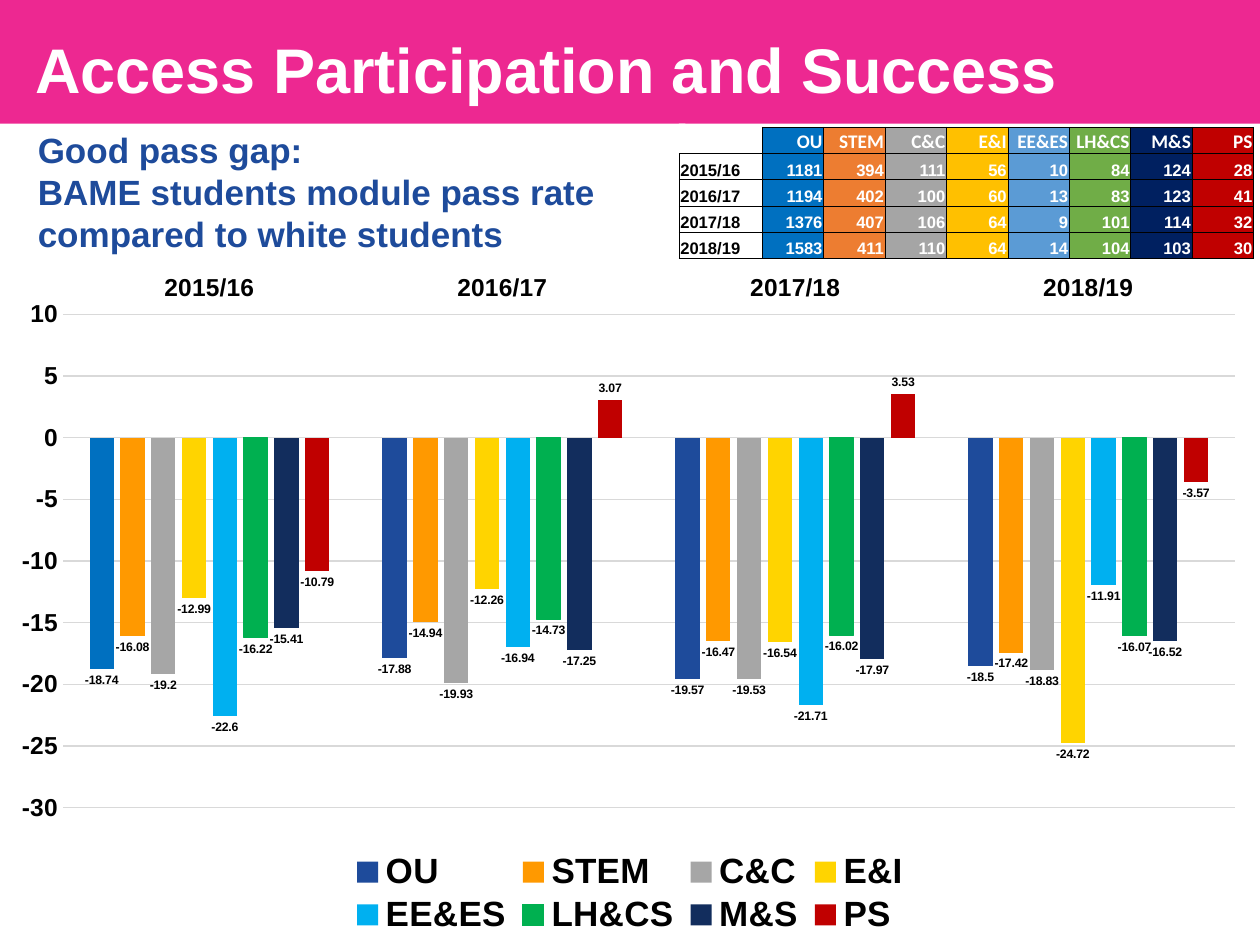
from lxml import etree
from pptx import Presentation, util as u
from pptx.chart.data import CategoryChartData
from pptx.dml.color import RGBColor
from pptx.enum import chart as charts, shapes, text
from pptx.oxml.ns import qn

YEARS = ["2015/16", "2016/17", "2017/18", "2018/19"]
STUDENT_COUNTS = {
    "OU": ("0070C0", [1181, 1194, 1376, 1583]),
    "STEM": ("ED7D31", [394, 402, 407, 411]),
    "C&C": ("A5A5A5", [111, 100, 106, 110]),
    "E&I": ("FFC000", [56, 60, 64, 64]),
    "EE&ES": ("5B9BD5", [10, 13, 9, 14]),
    "LH&CS": ("70AD47", [84, 83, 101, 104]),
    "M&S": ("002060", [124, 123, 114, 103]),
    "PS": ("C00000", [28, 41, 32, 30]),
}
PASS_GAPS = {
    "OU": ("1E4B9B", [-18.74, -17.88, -19.57, -18.5]),
    "STEM": ("FF9900", [-16.08, -14.94, -16.47, -17.42]),
    "C&C": ("A6A6A6", [-19.2, -19.93, -19.53, -18.83]),
    "E&I": ("FFD400", [-12.99, -12.26, -16.54, -24.72]),
    "EE&ES": ("00B0F0", [-22.6, -16.94, -21.71, -11.91]),
    "LH&CS": ("00B050", [-16.22, -14.73, -16.02, -16.07]),
    "M&S": ("122D5D", [-15.41, -17.25, -17.97, -16.52]),
    "PS": ("C00000", [-10.79, 3.07, 3.53, -3.57]),
}


def color(value):
    return RGBColor.from_string(value)


def apply(target, **values):
    for name, value in values.items():
        setattr(target, name, value)


def paint(fill, value):
    fill.solid()
    fill.fore_color.rgb = color(value)


class Deck:
    font = "Arial"
    ink = "000000"
    paper = "FFFFFF"
    grid = "D9D9D9"

    def __init__(self, width, height):
        self.deck = Presentation()
        apply(self.deck, slide_width=u.Pt(width), slide_height=u.Pt(height))
        self.slide = self.deck.slides.add_slide(self.deck.slide_layouts[6])

    def background(self, value):
        paint(self.slide.background.fill, value)

    def style(self, font, size, value=None, face=None):
        apply(font, size=u.Pt(size), bold=True, name=face or self.font)
        font.color.rgb = color(value or self.ink)

    def fill_text(self, frame, lines, size, value, inset=0, **format_values):
        apply(frame, word_wrap=True, margin_left=u.Pt(inset), margin_top=0,
              margin_right=0, margin_bottom=0)
        for index, line in enumerate(lines):
            paragraph = frame.paragraphs[0] if index == 0 else frame.add_paragraph()
            apply(paragraph, alignment=text.PP_ALIGN.LEFT, **format_values)
            run = paragraph.add_run()
            run.text = line
            self.style(run.font, size, value)

    def panel(self, *box):
        panel = self.slide.shapes.add_shape(shapes.MSO_SHAPE.RECTANGLE, *map(u.Pt, box))
        panel.shadow.inherit = False
        paint(panel.fill, self.paper)
        panel.line.fill.background()
        return panel

    def title(self, line, *box):
        title = self.slide.shapes.add_textbox(*map(u.Pt, box))
        self.fill_text(title.text_frame, [line], 36, self.paper, line_spacing=0.9)

    def statement(self, lines, *box):
        frame = self.panel(*box).text_frame
        self.fill_text(frame, lines, 20, "1E4B9B", inset=21.6)
        frame.vertical_anchor = text.MSO_ANCHOR.MIDDLE

    def borders(self, cell, sides):
        properties = cell._tc.get_or_add_tcPr()
        for side in "LRTB":
            line = etree.SubElement(properties, qn(f"a:ln{side}"), w=str(u.Pt(0.5)))
            if side in sides:
                fill = etree.SubElement(line, qn("a:solidFill"))
                etree.SubElement(fill, qn("a:srgbClr"), val=self.ink)
            else:
                etree.SubElement(line, qn("a:noFill"))

    def cell(self, cell, content, fill, size, value, face, align):
        apply(cell, margin_left=u.Pt(0.7), margin_right=u.Pt(0.7), margin_top=u.Pt(0.7),
              margin_bottom=0, vertical_anchor=text.MSO_ANCHOR.BOTTOM)
        self.borders(cell, "LRTB" if content else "RB")
        paint(cell.fill, fill)
        paragraph = cell.text_frame.paragraphs[0]
        paragraph.alignment = align
        if content:
            run = paragraph.add_run()
            run.text = content
            self.style(run.font, size, value, face)
        else:
            etree.SubElement(paragraph._p, qn("a:endParaRPr"), sz=str(size * 100))

    def counts_table(self, years, counts, left, top, width, height):
        table = self.slide.shapes.add_table(
            len(years) + 1, len(counts) + 1, *map(u.Pt, (left, top, width, height))).table
        apply(table, first_row=False, horz_banding=False)
        year_width = 47.5
        for index, column in enumerate(table.columns):
            column.width = u.Pt((width - year_width) / len(counts) if index else year_width)
        for row in table.rows:
            row.height = u.Pt(height / len(table.rows))
        align = text.PP_ALIGN
        for row, year in enumerate(["", *years]):
            self.cell(table.cell(row, 0), year, self.paper, 9.5 if row else 11,
                      self.ink, self.font, align.LEFT)
        for column, (faculty, (fill, values)) in enumerate(counts.items(), 1):
            for row, content in enumerate([faculty, *values]):
                size, face = (9.5, self.font) if row else (11, "Calibri")
                self.cell(table.cell(row, column), str(content), fill, size,
                          self.paper, face, align.RIGHT)

    def place(self, part, x, y, w, h, inner=False):
        for old in part.findall(qn("c:layout")):
            part.remove(old)
        layout = etree.Element(qn("c:layout"))
        manual = etree.SubElement(layout, qn("c:manualLayout"))
        settings = {"layoutTarget": "inner"} if inner else {}
        settings.update(xMode="edge", yMode="edge", x=x, y=y, w=w, h=h)
        for name, value in settings.items():
            etree.SubElement(manual, qn(f"c:{name}"), val=str(value))
        if inner:
            part.insert(0, layout)
        else:
            part.find(qn("c:legendPos")).addnext(layout)

    def gap_chart(self, years, gaps, *box):
        data = CategoryChartData()
        data.categories = years
        for faculty, (_, values) in gaps.items():
            data.add_series(faculty, values)
        chart = self.slide.shapes.add_chart(
            charts.XL_CHART_TYPE.COLUMN_CLUSTERED, *map(u.Pt, box), data).chart
        apply(chart, has_title=False, has_legend=True)
        self.style(chart.font, 10)
        apply(chart.legend, position=charts.XL_LEGEND_POSITION.BOTTOM, include_in_layout=False)
        self.style(chart.legend.font, 20)
        self.place(chart.legend._element, 0.27, 0.86, 0.46, 0.13)

        plot = chart.plots[0]
        apply(plot, gap_width=219, overlap=-27, vary_by_categories=False)
        for series, (fill, _) in zip(plot.series, gaps.values()):
            series.invert_if_negative = False
            paint(series.format.fill, fill)
            apply(series.data_labels, show_value=True,
                  position=charts.XL_LABEL_POSITION.OUTSIDE_END)
            self.style(series.data_labels.font, 7)
        paint(plot.series[0].points[0].format.fill, "0070C0")
        faculty_outline = plot.series[5].format.line
        faculty_outline.width = u.Pt(0.75)
        faculty_outline.color.rgb = color(gaps["LH&CS"][0])

        year_axis, gap_axis = chart.category_axis, chart.value_axis
        for axis in (year_axis, gap_axis):
            apply(axis, major_tick_mark=charts.XL_TICK_MARK.NONE,
                  minor_tick_mark=charts.XL_TICK_MARK.NONE)
            self.style(axis.tick_labels.font, 14)
        year_axis.tick_label_position = charts.XL_TICK_LABEL_POSITION.HIGH
        apply(gap_axis, minimum_scale=-30, maximum_scale=10, major_unit=5,
              has_major_gridlines=True)
        gap_axis.format.line.fill.background()
        for line in (year_axis.format.line, gap_axis.major_gridlines.format.line):
            line.width = u.Pt(0.75)
            line.color.rgb = color(self.grid)
        self.place(year_axis._element.getparent(), 0.05, 0.08, 0.93, 0.72, inner=True)


def main():
    page = Deck(720, 540)
    page.background("ED2891")
    page.panel(388, 70.6, 332, 77.8)
    page.panel(0, 103.7, 720, 436.3)
    page.title("Access Participation and Success", 20.2, 22.3, 690, 45.4)
    page.statement(
        ["Good pass gap:", "BAME students module pass rate compared to white students"],
        0, 70.6, 391.7, 77.8)
    page.gap_chart(YEARS, PASS_GAPS, 0, 148.3, 720, 391.7)
    page.counts_table(YEARS, STUDENT_COUNTS, 388.1, 72.7, 328.3, 75)
    page.deck.save("out.pptx")


if __name__ == "__main__":
    main()
